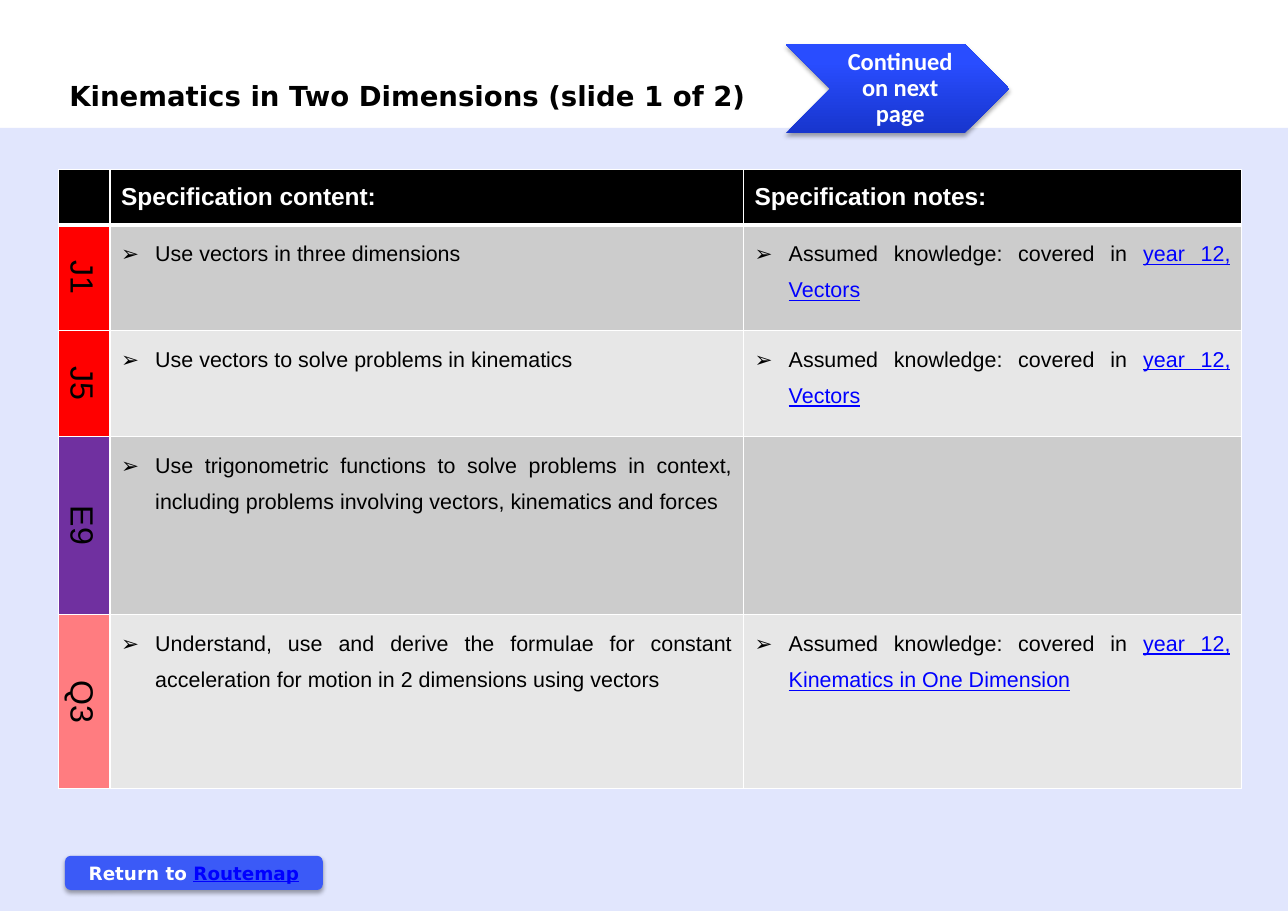
"""Build the specification slide for Kinematics in Two Dimensions."""
from lxml.etree import SubElement
from pptx import Presentation
from pptx.dml.color import RGBColor
from pptx.enum.shapes import MSO_SHAPE
from pptx.enum.text import MSO_ANCHOR, MSO_AUTO_SIZE, PP_ALIGN
from pptx.oxml.ns import qn
from pptx.util import Inches, Pt

TITLE = "Kinematics in Two Dimensions (slide 1 of 2)"
NEXT_PAGE = "Continued on next page"
RETURN = ("Return to ", "Routemap")
HEADINGS = ("", "Specification content:", "Specification notes:")
ASSUMED = "Assumed knowledge: covered in "
TOPICS = [
    ("J1", "red", "Use vectors in three dimensions", "year 12, Vectors"),
    ("J5", "red", "Use vectors to solve problems in kinematics", "year 12, Vectors"),
    ("E9", "purple", "Use trigonometric functions to solve problems in context, "
     "including problems involving vectors, kinematics and forces", ""),
    ("Q3", "pink", "Understand, use and derive the formulae for constant "
     "acceleration for motion in 2 dimensions using vectors",
     "year 12, Kinematics in One Dimension"),
]
COLUMN_SHARES = (0.47, 5.75, 4.52)
ROW_SHARES = (0.5, 0.96, 0.96, 1.62, 1.58)

COLORS = {
    "black": "000000", "white": "FFFFFF", "link": "0000FF", "blue": "3B5AF7",
    "deep": "1735CD", "bright": "294DFF", "red": "FF0000", "purple": "7030A0",
    "pink": "FF7C80", "dark band": "CCCCCC", "light band": "E7E7E7",
}
AREAS = {
    "band": (0, 14.03, 100, 85.97),
    "return": (5.05, 93.95, 20.02, 3.75),
    "title": (4.53, 8.1, 56.03, 4.84),
    "next": (61, 4.84, 17.37, 9.79),
    "table": (4.53, 18.62, 91.87, 67.96),
}

deck = Presentation()
deck.slide_width, deck.slide_height = Inches(11.69), Inches(8.27)
slide = deck.slides.add_slide(deck.slide_layouts[5])


def rgb(color):
    return RGBColor.from_string(COLORS[color])


def area(part):
    """Turn percentages of the slide into lengths."""
    sides = (deck.slide_width, deck.slide_height) * 2
    return [int(side * share / 100) for side, share in zip(sides, AREAS[part])]


def add_text(paragraph, text, size, face, color="black", bold=False, underline=False):
    run = paragraph.add_run()
    run.text = text
    run.font.size, run.font.name = Pt(size), face
    run.font.bold, run.font.underline = bold, underline
    run.font.color.rgb = rgb(color)


def add_panel(part, preset, shadow=True):
    panel = slide.shapes.add_shape(preset, *area(part))
    panel.fill.solid()
    panel.fill.fore_color.rgb = rgb("blue")
    panel.line.fill.background()
    panel.shadow.inherit = False
    if shadow:
        effects = panel._element.spPr.find(qn("a:effectLst"))
        outer = SubElement(effects, qn("a:outerShdw"), blurRad=str(Pt(3.1)),
                           dist=str(Pt(1.8)), dir="5400000", rotWithShape="0")
        shade = SubElement(outer, qn("a:srgbClr"), val=COLORS["black"])
        SubElement(shade, qn("a:alpha"), val="35000")
    panel.text_frame.word_wrap = True
    panel.text_frame.vertical_anchor = MSO_ANCHOR.MIDDLE
    panel.text_frame.paragraphs[0].alignment = PP_ALIGN.CENTER
    return panel


def style_cell(cell, fill, top=1, bottom=1):
    properties = cell._tc.get_or_add_tcPr()
    for side, width in (("L", 1), ("R", 1), ("T", top), ("B", bottom)):
        border = SubElement(properties, qn(f"a:ln{side}"), w=str(Pt(width)))
        paint = SubElement(border, qn("a:solidFill"))
        SubElement(paint, qn("a:srgbClr"), val=COLORS["white"])
    cell.fill.solid()
    cell.fill.fore_color.rgb = rgb(fill)
    return cell.text_frame.paragraphs[0]


def add_bullet(paragraph, text, link=""):
    indent = Inches(0.31)
    properties = paragraph._p.get_or_add_pPr()
    properties.set("marL", str(indent))
    properties.set("indent", str(-indent))
    SubElement(properties, qn("a:buFont"), typeface="Arial")
    SubElement(properties, qn("a:buChar"), char="➢")
    paragraph.alignment = PP_ALIGN.JUSTIFY
    paragraph.line_spacing = 1.5
    add_text(paragraph, text, 14, "Arial")
    if link:
        add_text(paragraph, link, 14, "Arial", "link", underline=True)


band = add_panel("band", MSO_SHAPE.RECTANGLE, shadow=False)
band_color = band._element.spPr.find(qn("a:solidFill")).find(qn("a:srgbClr"))
SubElement(band_color, qn("a:alpha"), val="15000")

return_line = add_panel("return", MSO_SHAPE.ROUNDED_RECTANGLE).text_frame.paragraphs[0]
add_text(return_line, RETURN[0], 12, "DejaVu Sans", "white", bold=True)
add_text(return_line, RETURN[1], 12, "DejaVu Sans", "link", bold=True, underline=True)

grid = slide.shapes.add_table(len(ROW_SHARES), len(COLUMN_SHARES), *area("table")).table
table_width, table_height = area("table")[2:]
for column, share in zip(grid.columns, COLUMN_SHARES):
    column.width = int(table_width * share / sum(COLUMN_SHARES))
for row, share in zip(grid.rows, ROW_SHARES):
    row.height = int(table_height * share / sum(ROW_SHARES))

for index, heading in enumerate(HEADINGS):
    header = grid.cell(0, index)
    header_line = style_cell(header, "black", bottom=3)
    header.vertical_anchor = MSO_ANCHOR.MIDDLE
    if heading:
        add_text(header_line, heading, 16, "Arial", "white", bold=True)

for index, (code, code_color, content, link) in enumerate(TOPICS, 1):
    top = 3 if index == 1 else 1
    stripe = "dark band" if index % 2 else "light band"
    code_cell, content_cell, notes_cell = grid.rows[index].cells
    code_line = style_cell(code_cell, code_color, top)
    code_cell._tc.tcPr.set("vert", "vert")
    code_line.alignment = PP_ALIGN.CENTER
    add_text(code_line, code, 21, "Arial")
    add_bullet(style_cell(content_cell, stripe, top), content)
    notes_line = style_cell(notes_cell, stripe, top)
    if link:
        add_bullet(notes_line, ASSUMED, link)

title = slide.shapes.title
title.left, title.top, title.width, title.height = area("title")
title.text_frame.auto_size = MSO_AUTO_SIZE.NONE
title.text_frame.vertical_anchor = MSO_ANCHOR.TOP
title.text_frame.paragraphs[0].alignment = PP_ALIGN.LEFT
add_text(title.text_frame.paragraphs[0], TITLE, 18, "DejaVu Sans", bold=True)

next_page = add_panel("next", MSO_SHAPE.CHEVRON)
next_page.fill.gradient()
next_page.fill.gradient_angle = 90
for stop, color, position in zip(next_page.fill.gradient_stops, ("deep", "bright"), (0, 0.8)):
    stop.color.rgb, stop.position = rgb(color), position
next_frame = next_page.text_frame
next_frame.margin_left = Inches(0.07)
next_frame.margin_top = next_frame.margin_right = next_frame.margin_bottom = Inches(0.02)
next_frame.paragraphs[0].line_spacing = 0.9
add_text(next_frame.paragraphs[0], NEXT_PAGE, 16, "Calibri", "white", bold=True)

deck.save("out.pptx")
